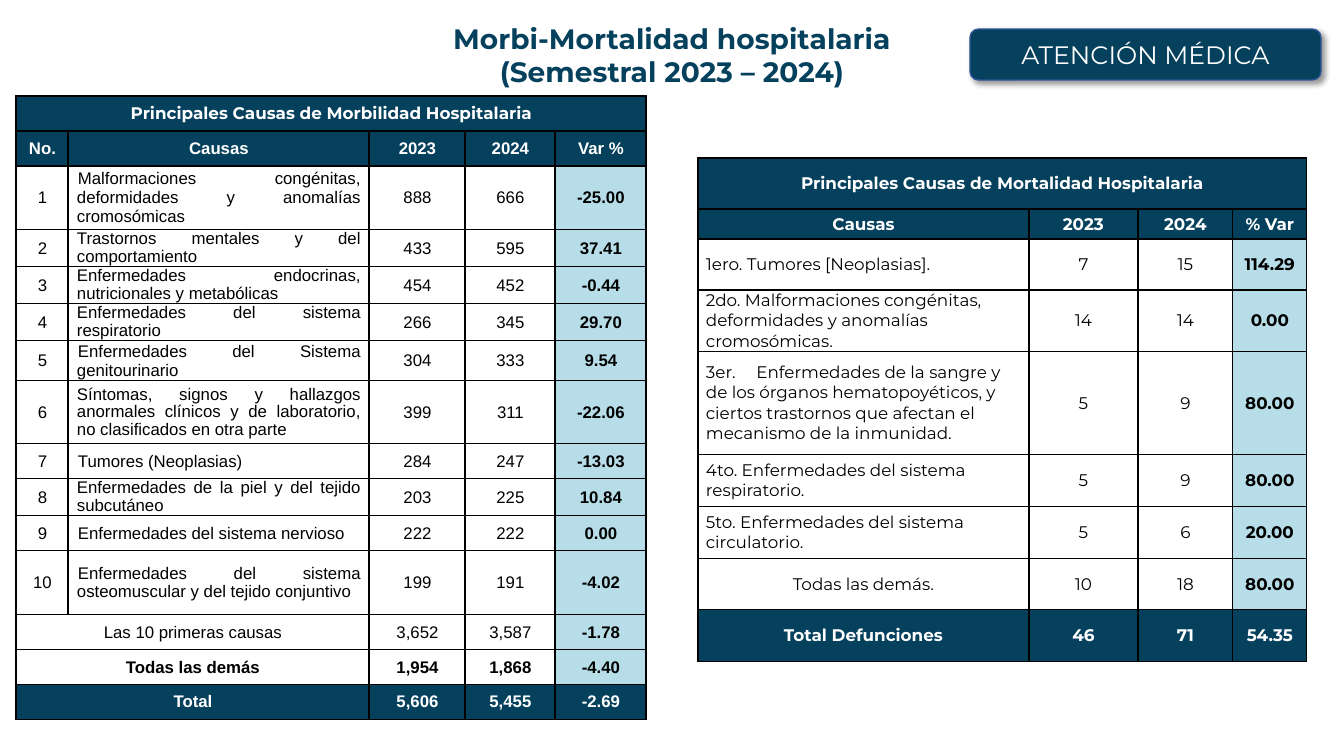
from dataclasses import dataclass

from lxml.etree import SubElement
from pptx import Presentation
from pptx.dml.color import RGBColor
from pptx.enum.shapes import MSO_SHAPE
from pptx.enum.text import MSO_ANCHOR, MSO_AUTO_SIZE, PP_ALIGN
from pptx.oxml.ns import qn
from pptx.util import Pt

# Content: row style, height in px, cells (None continues the cell to its left)
TITLE = "Morbi-Mortalidad hospitalaria\n(Semestral 2023 – 2024)"
BADGE = "ATENCIÓN MÉDICA"

MORBIDITY = [
    ("heading", 35, ["Principales Causas de Morbilidad Hospitalaria", None, None, None, None]),
    ("header", 35, ["No.", "Causas", "2023", "2024", "Var %"]),
    ("cause", 64, ["1", "Malformaciones congénitas, deformidades y anomalías cromosómicas",
                   "888", "666", "-25.00"]),
    ("tight", 37, ["2", "Trastornos mentales y del comportamiento", "433", "595", "37.41"]),
    ("tight", 37, ["3", "Enfermedades endocrinas, nutricionales y metabólicas",
                   "454", "452", "-0.44"]),
    ("tight", 37, ["4", "Enfermedades del sistema respiratorio", "266", "345", "29.70"]),
    ("cause", 40, ["5", "Enfermedades del Sistema genitourinario", "304", "333", "9.54"]),
    ("tight", 63, ["6", "Síntomas, signos y hallazgos anormales clínicos y de laboratorio, "
                   "no clasificados en otra parte", "399", "311", "-22.06"]),
    ("cause", 35, ["7", "Tumores (Neoplasias)", "284", "247", "-13.03"]),
    ("tight", 37, ["8", "Enfermedades de la piel y del tejido subcutáneo",
                   "203", "225", "10.84"]),
    ("cause", 35, ["9", "Enfermedades del sistema nervioso", "222", "222", "0.00"]),
    ("cause", 64, ["10", "Enfermedades del sistema osteomuscular y del tejido conjuntivo",
                   "199", "191", "-4.02"]),
    ("subtotal", 35, ["Las 10 primeras causas", None, "3,652", "3,587", "-1.78"]),
    ("strong", 35, ["Todas las demás", None, "1,954", "1,868", "-4.40"]),
    ("total", 35, ["Total", None, "5,606", "5,455", "-2.69"]),
]
MORTALITY = [
    ("heading", 51, ["Principales Causas de Mortalidad Hospitalaria", None, None, None]),
    ("header", 30, ["Causas", "2023", "2024", "% Var"]),
    ("cause", 51, ["1ero. Tumores [Neoplasias].", "7", "15", "114.29"]),
    ("cause", 61, ["2do. Malformaciones congénitas, deformidades y anomalías cromosómicas.",
                   "14", "14", "0.00"]),
    ("cause", 103, ["3er.\tEnfermedades de la sangre y de los órganos hematopoyéticos, y "
                    "ciertos trastornos que afectan el mecanismo de la inmunidad.",
                    "5", "9", "80.00"]),
    ("cause", 52, ["4to. Enfermedades del sistema respiratorio.", "5", "9", "80.00"]),
    ("cause", 52, ["5to. Enfermedades del sistema circulatorio.", "5", "6", "20.00"]),
    ("subtotal", 51, ["Todas las demás.", "10", "18", "80.00"]),
    ("total", 52, ["Total Defunciones", "46", "71", "54.35"]),
]


@dataclass(frozen=True)
class Theme:
    navy: RGBColor = RGBColor.from_string("05405D")
    outline: RGBColor = RGBColor.from_string("2F5496")
    pale: RGBColor = RGBColor.from_string("B7DEE8")
    white: RGBColor = RGBColor.from_string("FFFFFF")
    black: RGBColor = RGBColor.from_string("000000")
    main_font: str = "Montserrat"
    plain_font: str = "Arial"
    title_size: int = 20
    badge_size: int = 18
    table_size: int = 12


THEME = Theme()
DARK_STYLES = ("heading", "header", "total")
CAUSE_STYLES = ("cause", "tight")


def px(length):
    return round(length * 914400 / 100.8)


def place(shape, left, top, width, height):
    shape.left, shape.top, shape.width, shape.height = map(px, (left, top, width, height))


def format_runs(para, font_name, size, color, bold):
    for span in para.runs:
        span.font.name = font_name
        span.font.size = Pt(size)
        span.font.color.rgb = color
        span.font.bold = bold


def add_borders(cell):
    properties = cell._tc.get_or_add_tcPr()
    for side in ("a:lnL", "a:lnR", "a:lnT", "a:lnB"):
        line = SubElement(properties, qn(side), w=str(Pt(1)))
        SubElement(SubElement(line, qn("a:solidFill")), qn("a:srgbClr"), val=str(THEME.black))


def format_cell(cell, style, is_cause, is_variation, font_name, cause_align, indented):
    dark = style in DARK_STYLES
    cell.vertical_anchor = MSO_ANCHOR.MIDDLE
    cell.margin_left = cell.margin_right = px(8)
    cell.margin_top = cell.margin_bottom = 0
    add_borders(cell)
    cell.fill.solid()
    cell.fill.fore_color.rgb = (THEME.navy if dark else
                                THEME.pale if is_variation else THEME.white)
    para = cell.text_frame.paragraphs[0]
    para.alignment = cause_align if is_cause else PP_ALIGN.CENTER
    if is_cause and style == "tight":
        para.line_spacing = 0.93
    if indented:
        paragraph_properties = para._p.get_or_add_pPr()
        paragraph_properties.set("marL", str(px(1 if is_cause else 0)))
        paragraph_properties.set("indent", str(px(0 if is_cause and style == "tight" else 1)))
    format_runs(para, font_name, THEME.table_size, THEME.white if dark else THEME.black,
                dark or is_variation or style == "strong")


def add_cause_table(page, rows, left, top, widths, cause_column, body_font, cause_align, indented):
    height = sum(row[1] for row in rows)
    table = page.shapes.add_table(len(rows), len(widths), px(left), px(top),
                                  px(sum(widths)), px(height)).table
    table.first_row = table.horz_banding = False
    for column, width in zip(table.columns, widths):
        column.width = px(width)
    last = len(widths) - 1
    for row_index, (style, row_height, texts) in enumerate(rows):
        table.rows[row_index].height = px(row_height)
        font_name = THEME.main_font if style == "heading" else body_font
        for column_index, text in enumerate(texts):
            cell = table.cell(row_index, column_index)
            cell.text_frame.text = text or ""
            is_cause = column_index == cause_column and style in CAUSE_STYLES
            format_cell(cell, style, is_cause, column_index == last,
                        font_name, cause_align, indented)
        merged = texts.count(None)
        if merged:
            table.cell(row_index, 0).merge(table.cell(row_index, merged))


def add_title(page):
    title = page.shapes.title
    place(title, 362, 7, 620, 96)
    frame = title.text_frame
    frame.text = TITLE
    frame.word_wrap = True
    frame.auto_size = MSO_AUTO_SIZE.NONE
    frame.vertical_anchor = MSO_ANCHOR.TOP
    frame.margin_top = px(14)
    for para in frame.paragraphs:
        para.alignment = PP_ALIGN.CENTER
        format_runs(para, THEME.main_font, THEME.title_size, THEME.navy, True)


def add_badge(page):
    badge = page.shapes.add_shape(MSO_SHAPE.ROUNDED_RECTANGLE, 0, 0, 0, 0)
    place(badge, 970, 29, 351, 51)
    badge.fill.solid()
    badge.fill.fore_color.rgb = THEME.navy
    badge.line.color.rgb = THEME.outline
    badge.line.width = Pt(1)
    badge.shadow.inherit = False
    effects = badge._element.spPr.find(qn("a:effectLst"))
    shadow = SubElement(effects, qn("a:outerShdw"), blurRad=str(Pt(4)), dist=str(Pt(3)),
                        dir=str(45 * 60000), algn="tl", rotWithShape="0")
    shadow_color = SubElement(shadow, qn("a:srgbClr"), val=str(THEME.black))
    SubElement(shadow_color, qn("a:alpha"), val="40000")
    frame = badge.text_frame
    frame.text = BADGE
    frame.vertical_anchor = MSO_ANCHOR.MIDDLE
    frame.paragraphs[0].alignment = PP_ALIGN.CENTER
    format_runs(frame.paragraphs[0], THEME.main_font, THEME.badge_size, THEME.white, False)


def main():
    deck = Presentation()
    deck.slide_width, deck.slide_height = px(1344), px(756)
    page = deck.slides.add_slide(deck.slide_layouts[5])
    # Heading
    add_title(page)
    add_badge(page)
    # Tables
    add_cause_table(page, MORBIDITY, 16, 96, [52, 301, 96, 90, 91], 1,
                    THEME.plain_font, PP_ALIGN.JUSTIFY, True)
    add_cause_table(page, MORTALITY, 698, 158, [331, 109, 95, 74], 0,
                    THEME.main_font, PP_ALIGN.LEFT, False)
    deck.save("out.pptx")


if __name__ == "__main__":
    main()
